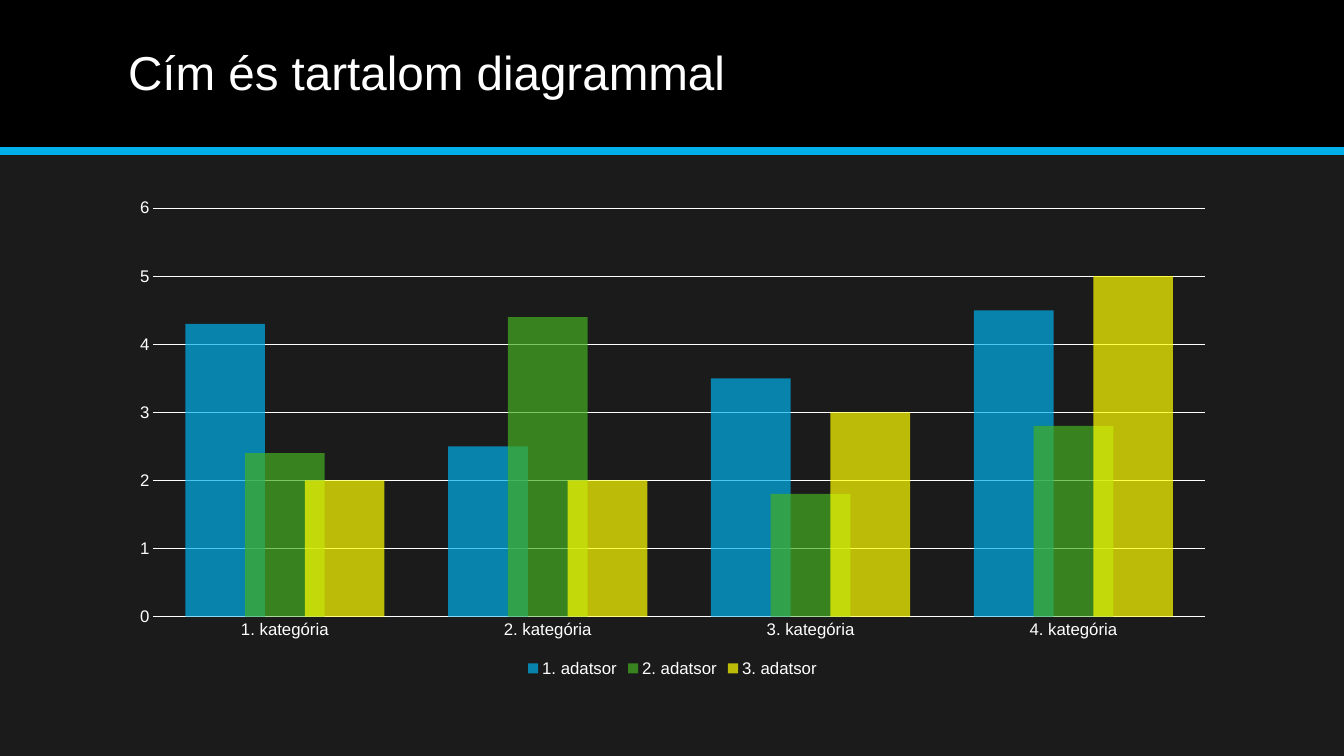
"""Build a title slide with a clustered column chart on a dark background."""
from dataclasses import dataclass

import lxml.etree
import pptx
import pptx.chart.axis
import pptx.chart.data
import pptx.dml.color
import pptx.dml.fill
import pptx.dml.line
import pptx.enum.chart
import pptx.enum.shapes
import pptx.enum.text
import pptx.oxml.ns
import pptx.slide
import pptx.text.text
import pptx.util

Inches = pptx.util.Inches
Pt = pptx.util.Pt
qn = pptx.oxml.ns.qn


@dataclass(frozen=True)
class Theme:
    font: str = "Arial"
    background: str = "1B1B1B"
    band: str = "000000"
    accent: str = "00B0EA"
    text: str = "FFFFFF"
    title_size: float = 34
    label_size: float = 12
    chart_size: float = 10


@dataclass(frozen=True)
class Series:
    name: str
    values: tuple[float, ...]
    color: str


THEME = Theme()
WIDTH, HEIGHT = Inches(13.33), Inches(7.5)
BAND_HEIGHT = Inches(1.5)
LEFT, CONTENT_WIDTH = Inches(1.17), Inches(11)
BAR_OPACITY = 70
CATEGORIES = [f"{n}. kategória" for n in range(1, 5)]
SERIES = (
    Series("1. adatsor", (4.3, 2.5, 3.5, 4.5), THEME.accent),
    Series("2. adatsor", (2.4, 4.4, 1.8, 2.8), "45AE22"),
    Series("3. adatsor", (2, 2, 3, 5), "FFFF00"),
)


def set_attrs(obj: object, formats: dict[str, object]) -> None:
    """Set every attribute named in a dict of format values."""
    for name, value in formats.items():
        setattr(obj, name, value)


def set_fill(fill: pptx.dml.fill.FillFormat, color: str) -> None:
    """Apply a solid fill."""
    fill.solid()
    fill.fore_color.rgb = pptx.dml.color.RGBColor.from_string(color)


def set_line(line: pptx.dml.line.LineFormat, color: str, width: float) -> None:
    """Apply a solid line of the given width in points."""
    set_fill(line.fill, color)
    line.width = Pt(width)


def set_font(font: pptx.text.text.Font, size: float) -> None:
    """Apply the theme font and text colour at the given size."""
    set_attrs(font, {"name": THEME.font, "size": Pt(size), "bold": False})
    set_fill(font.fill, THEME.text)


def add_header(slide: pptx.slide.Slide) -> None:
    """Draw the title band and the accent line under it."""
    sp = slide.shapes.add_shape(
        pptx.enum.shapes.MSO_SHAPE.RECTANGLE, 0, 0, WIDTH, BAND_HEIGHT)
    sp.shadow.inherit = False
    set_fill(sp.fill, THEME.band)
    sp.line.fill.background()
    rule = slide.shapes.add_connector(
        pptx.enum.shapes.MSO_CONNECTOR.STRAIGHT, 0, BAND_HEIGHT, WIDTH, BAND_HEIGHT)
    set_line(rule.line, THEME.accent, 6)
    lxml.etree.SubElement(rule._element.spPr, qn("a:effectLst"))


def add_title(slide: pptx.slide.Slide, text: str) -> None:
    """Fill the title placeholder and bring it in front of the band."""
    sp = slide.shapes.title
    set_attrs(sp, {"left": LEFT, "top": Inches(0.14),
                   "width": CONTENT_WIDTH, "height": Inches(1.2)})
    tf = sp.text_frame
    set_attrs(tf, {"word_wrap": True,
                   "vertical_anchor": pptx.enum.text.MSO_ANCHOR.MIDDLE})
    p = tf.paragraphs[0]
    set_attrs(p, {"alignment": pptx.enum.text.PP_ALIGN.LEFT, "line_spacing": 0.9})
    r = p.add_run()
    r.text = text
    set_font(r.font, THEME.title_size)
    sp._element.getparent().append(sp._element)


def format_axis(axis: pptx.chart.axis._BaseAxis, formats: dict[str, object]) -> None:
    """Apply label type, hide tick marks and set further axis values."""
    none = pptx.enum.chart.XL_TICK_MARK.NONE
    set_attrs(axis, {"major_tick_mark": none, "minor_tick_mark": none} | formats)
    set_font(axis.tick_labels.font, THEME.label_size)


def add_column_chart(slide: pptx.slide.Slide) -> None:
    """Add the chart with overlapping translucent columns."""
    data = pptx.chart.data.CategoryChartData()
    data.categories = CATEGORIES
    for series in SERIES:
        data.add_series(series.name, series.values)
    chart = slide.shapes.add_chart(
        pptx.enum.chart.XL_CHART_TYPE.COLUMN_CLUSTERED,
        LEFT, Inches(1.88), CONTENT_WIDTH, Inches(4.88), data).chart
    set_attrs(chart, {"has_title": False, "has_legend": True})
    set_font(chart.font, THEME.chart_size)
    set_attrs(chart.legend, {
        "position": pptx.enum.chart.XL_LEGEND_POSITION.BOTTOM,
        "include_in_layout": False})
    set_font(chart.legend.font, THEME.label_size)

    plot = chart.plots[0]
    set_attrs(plot, {"gap_width": 80, "overlap": 25, "vary_by_categories": False})
    for series, bars in zip(SERIES, plot.series):
        bars.invert_if_negative = False
        set_fill(bars.format.fill, series.color)
        clr = bars._element.find(f".//{qn('a:srgbClr')}")
        lxml.etree.SubElement(clr, qn("a:alpha"), val=str(BAR_OPACITY * 1000))

    format_axis(chart.category_axis, {"has_major_gridlines": False})
    set_line(chart.category_axis.format.line, THEME.text, 1.25)
    format_axis(chart.value_axis, {
        "has_major_gridlines": True, "minimum_scale": 0,
        "maximum_scale": 6, "major_unit": 1})
    chart.value_axis.format.line.fill.background()
    set_line(chart.value_axis.major_gridlines.format.line, THEME.text, 0.75)


def main() -> None:
    """Create and save the presentation."""
    prs = pptx.Presentation()
    set_attrs(prs, {"slide_width": WIDTH, "slide_height": HEIGHT})
    s = prs.slides.add_slide(prs.slide_layouts.get_by_name("Title Only"))
    set_fill(s.background.fill, THEME.background)
    add_header(s)
    add_title(s, "Cím és tartalom diagrammal")
    add_column_chart(s)
    prs.save("out.pptx")


if __name__ == "__main__":
    main()
